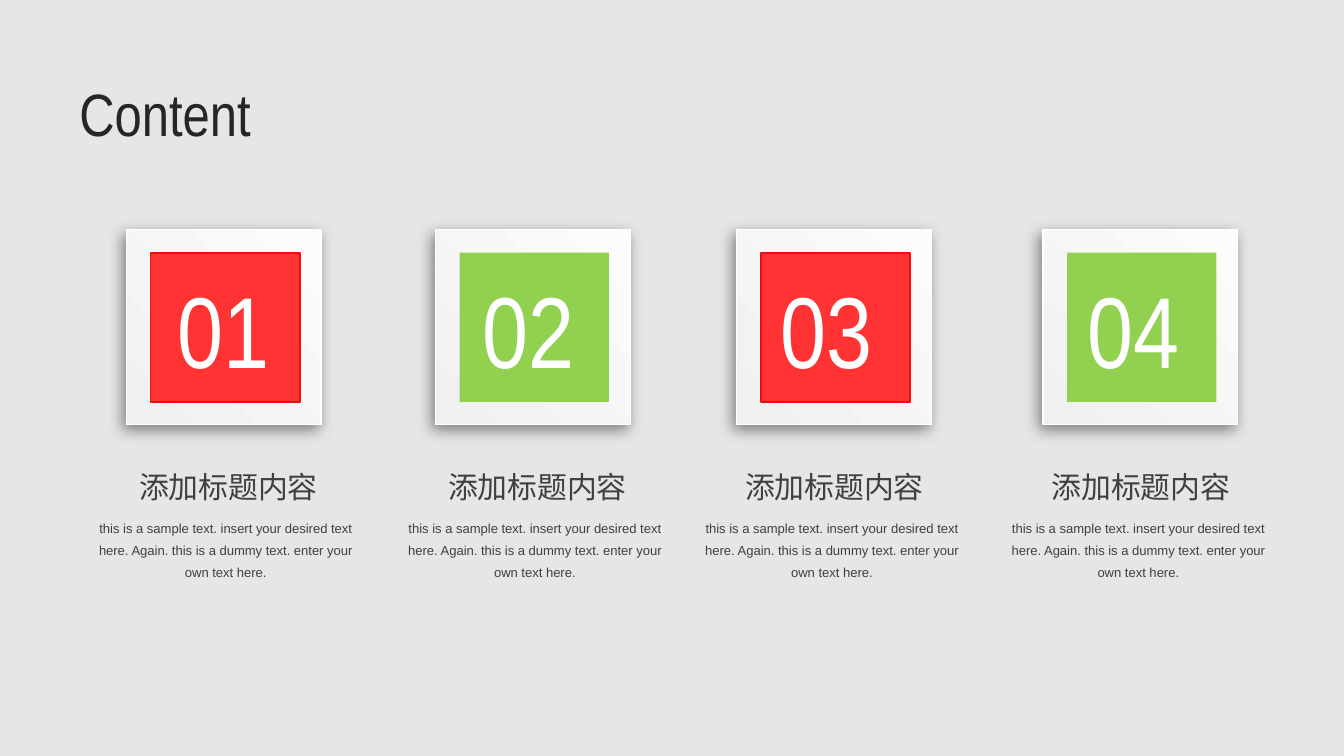
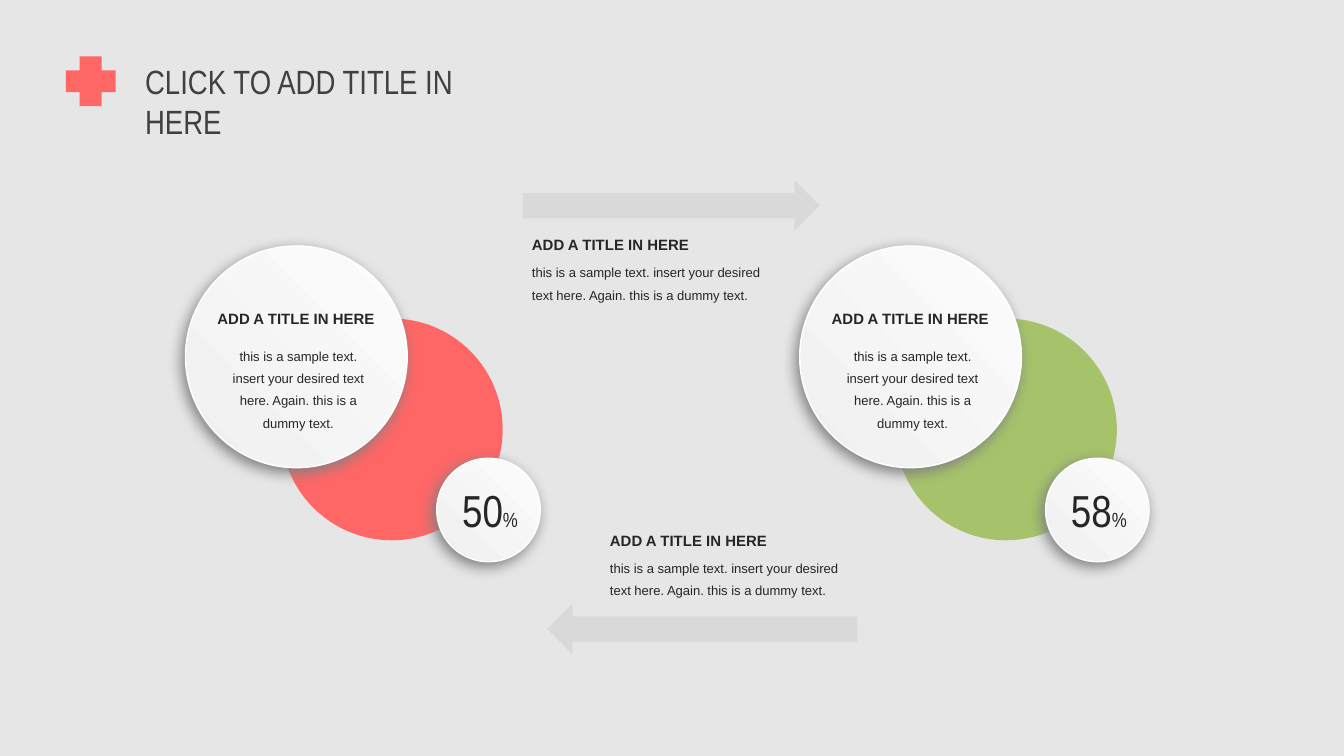
import dataclasses

import lxml.etree
import pptx
import pptx.dml.color
import pptx.enum.shapes
import pptx.enum.text
import pptx.oxml.ns
import pptx.util

Inches = pptx.util.Inches
Pt = pptx.util.Pt
SHAPE = pptx.enum.shapes.MSO_SHAPE
ALIGN = pptx.enum.text.PP_ALIGN


@dataclasses.dataclass(frozen=True)
class Theme:
    background: str = "E7E6E6"
    ink: str = "262626"
    soft_ink: str = "404040"
    white: str = "FFFFFF"
    panel_dark: str = "F0F0F0"
    panel_light: str = "FCFCFC"
    shadow: str = "808080"
    red: str = "FF3333"
    red_edge: str = "E81010"
    green: str = "92D050"
    coral: str = "FF6666"
    olive: str = "A6C36B"
    arrow: str = "D9D9D9"
    narrow: str = "Arial Narrow"
    plain: str = "Arial"
    chinese: str = "Noto Sans CJK SC"
    title_size: int = 32
    long_title_size: int = 18
    number_size: int = 54
    caption_size: int = 16
    percent_size: int = 24
    percent_sign_size: int = 11
    heading_size: int = 8
    body_size: int = 7
    line_pitch: int = 12


THEME = Theme()
HEADING = "ADD A TITLE IN HERE"
SHORT_TEXT = "this is a sample text. insert your desired text here. Again. this is a dummy text."
LONG_TEXT = SHORT_TEXT + " enter your own text here."


def rgb(color):
    return pptx.dml.color.RGBColor.from_string(color)


# Text
def format_run(run, size, font, color, bold=False):
    run.font.size = Pt(size)
    run.font.name = font
    run.font.bold = bold
    run.font.color.rgb = rgb(color)
    if font == THEME.chinese:
        east_asian = lxml.etree.SubElement(run.font._element, pptx.oxml.ns.qn("a:ea"))
        east_asian.set("typeface", font)


def add_text(shapes, box, text, size, font, color, bold=False, align=ALIGN.LEFT, pitch=None):
    shape = shapes.add_textbox(*map(Inches, box))
    frame = shape.text_frame
    frame.text = text
    frame.word_wrap = True
    paragraph = frame.paragraphs[0]
    paragraph.alignment = align
    if pitch:
        paragraph.line_spacing = Pt(pitch)
    format_run(paragraph.runs[0], size, font, color, bold)
    return paragraph


def add_heading(shapes, left, top):
    add_text(shapes, (left, top, 1.4, 0.27), HEADING, THEME.heading_size, THEME.plain,
             THEME.ink, bold=True, pitch=THEME.line_pitch)


def add_body(shapes, box, text, color=THEME.ink, align=ALIGN.LEFT):
    add_text(shapes, box, text, THEME.body_size, THEME.plain, color,
             align=align, pitch=THEME.line_pitch)


def set_title(slide, text, box, size, color):
    title = slide.shapes.title
    title.left, title.top, title.width, title.height = map(Inches, box)
    frame = title.text_frame
    frame.text = text
    frame.word_wrap = True
    frame.auto_size = pptx.enum.text.MSO_AUTO_SIZE.NONE
    frame.vertical_anchor = pptx.enum.text.MSO_ANCHOR.TOP
    frame.paragraphs[0].alignment = ALIGN.LEFT
    format_run(frame.paragraphs[0].runs[0], size, THEME.narrow, color)


# Shapes
def add_flat(shapes, kind, box, fill, line=None):
    shape = shapes.add_shape(kind, *map(Inches, box))
    shape.shadow.inherit = False
    shape.fill.solid()
    shape.fill.fore_color.rgb = rgb(fill)
    if line:
        shape.line.color.rgb = rgb(line)
        shape.line.width = Pt(1)
    else:
        shape.line.fill.background()
    return shape


def add_panel(shapes, kind, left, top, size):
    """Raised white panel with a diagonal gradient and a soft shadow."""
    shape = add_flat(shapes, kind, (left, top, size, size), THEME.white, THEME.white)
    shape.line.width = Pt(0.75)
    shape.fill.gradient()
    shape.fill.gradient_angle = 45
    for stop, color in zip(shape.fill.gradient_stops, (THEME.panel_dark, THEME.panel_light)):
        stop.color.rgb = rgb(color)
    qn = pptx.oxml.ns.qn
    effects = shape._element.spPr.find(qn("a:effectLst"))
    shadow = lxml.etree.SubElement(effects, qn("a:outerShdw"))
    settings = {"blurRad": Pt(8), "dist": Pt(3), "dir": 130 * 60000,
                "algn": "ctr", "rotWithShape": 0}
    for name, value in settings.items():
        shadow.set(name, str(value))
    lxml.etree.SubElement(shadow, qn("a:srgbClr")).set("val", THEME.shadow)


def add_number_card(slide, left, number_left, number, fill, line):
    shapes = slide.shapes.add_group_shape().shapes
    add_panel(shapes, SHAPE.RECTANGLE, left, 1.71, 1.45)
    add_flat(shapes, SHAPE.RECTANGLE, (left + 0.18, 1.88, 1.11, 1.11), fill, line)
    add_text(shapes, (number_left, 1.94, 1, 1.01), number, THEME.number_size,
             THEME.narrow, THEME.white)


def add_card_caption(slide, left):
    shapes = slide.shapes.add_group_shape().shapes
    add_text(shapes, (left + 0.27, 3.44, 1.7, 0.37), "添加标题内容", THEME.caption_size,
             THEME.chinese, THEME.soft_ink, align=ALIGN.CENTER)
    add_body(shapes, (left, 3.77, 2.2, 0.61), LONG_TEXT, THEME.soft_ink, ALIGN.CENTER)


def add_circle_cluster(slide, left, badge_left, percent, color):
    # Coloured disc behind the text disc
    add_flat(slide.shapes, SHAPE.OVAL, (left + 0.71, 2.37, 1.65, 1.65), color)
    shapes = slide.shapes.add_group_shape().shapes
    add_panel(shapes, SHAPE.OVAL, left, 1.83, 1.65)
    add_body(shapes, (left + 0.18, 2.49, 1.32, 0.77), SHORT_TEXT, align=ALIGN.CENTER)
    add_heading(shapes, left + 0.14, 2.22)
    # Percentage badge
    shapes = slide.shapes.add_group_shape().shapes
    add_panel(shapes, SHAPE.OVAL, badge_left, 3.41, 0.77)
    paragraph = add_text(shapes, (badge_left + 0.09, 3.54, 0.67, 0.5), percent,
                         THEME.percent_size, THEME.narrow, THEME.ink)
    sign = paragraph.add_run()
    sign.text = "%"
    format_run(sign, THEME.percent_sign_size, THEME.narrow, THEME.ink)


def add_note(slide, left, top):
    shapes = slide.shapes.add_group_shape().shapes
    add_body(shapes, (left, top + 0.2, 1.99, 0.44), SHORT_TEXT)
    add_heading(shapes, left, top)


# Slides
def add_slide(presentation):
    return presentation.slides.add_slide(presentation.slide_layouts.get_by_name("Title Only"))


def build_content(presentation):
    slide = add_slide(presentation)
    set_title(slide, "Content", (0.49, 0.52, 1.65, 0.64), THEME.title_size, THEME.ink)
    red, green = (THEME.red, THEME.red_edge), (THEME.green, None)
    # Left edges of card, number and caption
    columns = [(0.94, 1.22, 0.58, red), (3.24, 3.49, 2.88, green),
               (5.48, 5.71, 5.09, red), (7.76, 7.99, 7.37, green)]
    for index, (card, number, caption, colors) in enumerate(columns, start=1):
        add_number_card(slide, card, number, f"{index:02}", *colors)
        add_card_caption(slide, caption)


def build_exchange(presentation):
    slide = add_slide(presentation)
    set_title(slide, "CLICK TO ADD TITLE IN HERE", (0.98, 0.4, 2.87, 0.4),
              THEME.long_title_size, THEME.soft_ink)
    plus = add_flat(slide.shapes, SHAPE.CROSS, (0.49, 0.42, 0.37, 0.37), THEME.coral)
    plus.adjustments[0] = 0.28
    add_circle_cluster(slide, 1.38, 3.25, "50", THEME.coral)
    add_circle_cluster(slide, 5.95, 7.78, "58", THEME.olive)
    # Arrows there and back, with their notes
    add_flat(slide.shapes, SHAPE.RIGHT_ARROW, (3.89, 1.34, 2.21, 0.38), THEME.arrow)
    back = add_flat(slide.shapes, SHAPE.RIGHT_ARROW, (4.07, 4.49, 2.31, 0.38), THEME.arrow)
    back.rotation = 180
    add_note(slide, 4.44, 3.87)
    add_note(slide, 3.86, 1.67)


def main():
    presentation = pptx.Presentation()
    # Widescreen, 16 to 9
    presentation.slide_width = Inches(10)
    presentation.slide_height = Inches(10 * 9 / 16)
    background = presentation.slide_master.background.fill
    background.solid()
    background.fore_color.rgb = rgb(THEME.background)
    build_content(presentation)
    build_exchange(presentation)
    presentation.save("out.pptx")


if __name__ == "__main__":
    main()
